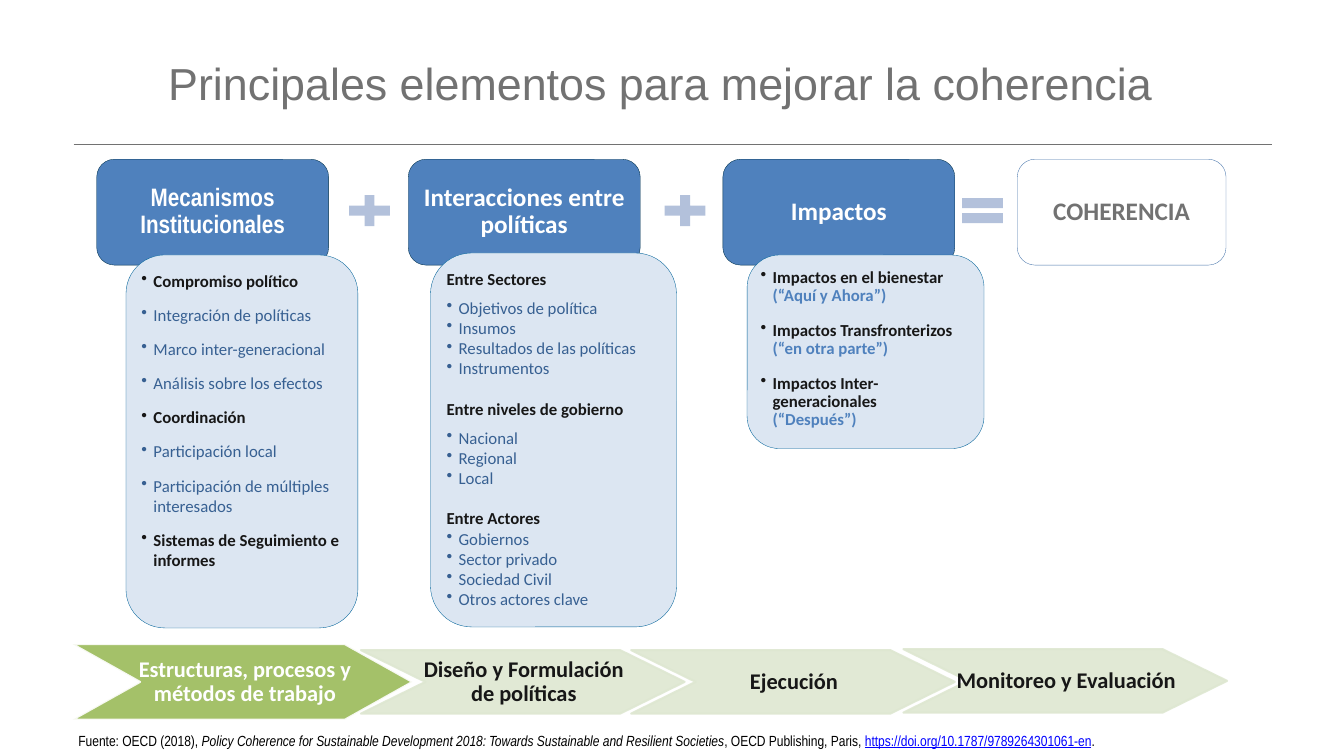
import copy

import pptx
import pptx.dml.color
import pptx.enum.shapes
import pptx.enum.text
import pptx.util
from lxml import etree
from pptx.util import Inches

SHAPES = pptx.enum.shapes.MSO_SHAPE
ALIGN = pptx.enum.text.PP_ALIGN
ANCHOR = pptx.enum.text.MSO_ANCHOR
DRAWING = "{http://schemas.openxmlformats.org/drawingml/2006/main}"
WHITE, GRAY, DARK = "FFFFFF", "727272", "171717"
BLUE, NAVY, PALE_BLUE, OPERATOR = "4F81BD", "376092", "DCE6F2", "B3C1DB"
GREEN, PALE_GREEN = "9BBB59", "DEE7D1"


def color(value):
    return pptx.dml.color.RGBColor.from_string(value)


class CoherenceSlide:
    """Holds the slide and its style, with one method per kind of element."""

    def __init__(self, slide, font="Calibri"):
        self.shapes = slide.shapes
        self.font = font

    def format_run(self, run, size, tint, bold=False, font=None):
        run.font.size = pptx.util.Pt(size)
        run.font.name = font or self.font
        run.font.bold = bold
        run.font.color.rgb = color(tint)

    def paint(self, shape, fill, line=None, width=0.25):
        shape.shadow.inherit = False
        shape.fill.solid()
        shape.fill.fore_color.rgb = color(fill)
        if line:
            shape.line.color.rgb = color(line)
            shape.line.width = pptx.util.Pt(width)
        else:
            shape.line.fill.background()

    def frame(self, shape, anchor, left=0.04, right=0.04, vertical=0.04):
        frame = shape.text_frame
        frame.word_wrap = True
        frame.vertical_anchor = anchor
        frame.margin_left, frame.margin_right = Inches(left), Inches(right)
        frame.margin_top = frame.margin_bottom = Inches(vertical)
        return frame

    def label(self, frame, text, size, tint, font=None):
        frame.text = text
        paragraph = frame.paragraphs[0]
        paragraph.alignment = ALIGN.CENTER
        paragraph.line_spacing = 0.9
        self.format_run(paragraph.runs[0], size, tint, True, font)

    def add_bullet(self, paragraph):
        properties = paragraph._p.get_or_add_pPr()
        properties.set("marL", str(Inches(0.12)))
        properties.set("indent", str(-Inches(0.12)))
        etree.SubElement(properties, DRAWING + "buChar").set("char", "•")

    def rule(self, left, top, width):
        line = self.shapes.add_connector(
            pptx.enum.shapes.MSO_CONNECTOR.STRAIGHT,
            Inches(left), Inches(top), Inches(left + width), Inches(top))
        line.line.color.rgb = color(GRAY)
        line.line.width = pptx.util.Pt(0.5)
        etree.SubElement(line._element.spPr, DRAWING + "effectLst")

    def text(self, left, top, width, height, pieces, size, font, anchor):
        box = self.shapes.add_textbox(Inches(left), Inches(top), Inches(width), Inches(height))
        frame = self.frame(box, anchor, 0.1, 0.1, 0.05)
        for words, tint, italic, underline in pieces:
            run = frame.paragraphs[0].add_run()
            run.text = words
            self.format_run(run, size, tint, font=font)
            run.font.italic = italic
            run.font.underline = underline

    def header(self, left, width, text, fill, line, tint, font=None):
        card = self.shapes.add_shape(
            SHAPES.ROUNDED_RECTANGLE, Inches(left), Inches(1.58), Inches(width), Inches(1.05))
        self.paint(card, fill, line)
        self.label(self.frame(card, ANCHOR.MIDDLE), text, 18, tint, font)

    def operator(self, kind, left):
        sign = self.shapes.add_shape(
            kind, Inches(left), Inches(1.88), Inches(0.55), Inches(0.42))
        self.paint(sign, OPERATOR)

    def panel(self, left, top, width, height, entries):
        card = self.shapes.add_shape(
            SHAPES.ROUNDED_RECTANGLE, Inches(left), Inches(top), Inches(width), Inches(height))
        self.paint(card, PALE_BLUE, "006299")
        frame = self.frame(card, ANCHOR.TOP)
        for index, (text, bold, bullet, before, after, spacing) in enumerate(entries):
            paragraph = frame.add_paragraph() if index else frame.paragraphs[0]
            paragraph.text = text
            if bullet:
                self.add_bullet(paragraph)
            paragraph.alignment = ALIGN.LEFT
            paragraph.line_spacing = spacing
            paragraph.space_before = pptx.util.Pt(before)
            paragraph.space_after = pptx.util.Pt(after)
            tints = (DARK if bold else NAVY, BLUE)
            for run, tint in zip(paragraph.runs, tints):
                self.format_run(run, 12, tint, bold)
            for line_break in paragraph._p.findall(DRAWING + "br"):
                line_break.append(copy.deepcopy(paragraph.runs[0].font._element))

    def chevron(self, left, top, width, height, notch, text, fill, line, tint, margins):
        right, bottom, middle = left + width, top + height, top + height / 2
        outline = [(right - notch, top), (right, middle), (right - notch, bottom),
                   (left, bottom), (left + notch, middle)]
        builder = self.shapes.build_freeform(Inches(left), Inches(top))
        builder.add_line_segments([(Inches(x), Inches(y)) for x, y in outline], close=True)
        step = builder.convert_to_shape()
        self.paint(step, fill, line, 1.5)
        for tone in step._element.spPr.iter(DRAWING + "srgbClr"):
            etree.SubElement(tone, DRAWING + "alpha").set("val", "90000")
        self.label(self.frame(step, ANCHOR.MIDDLE, *margins), text, 16, tint)


def main():
    presentation = pptx.Presentation()
    presentation.slide_width, presentation.slide_height = Inches(13.33), Inches(7.5)
    page = CoherenceSlide(presentation.slides.add_slide(presentation.slide_layouts[6]))

    page.rule(0.73, 1.43, 11.89)
    title = "Principales elementos para mejorar la coherencia"
    page.text(1.57, 0.26, 10.81, 1.12, [(title, GRAY, False, False)], 32, "Arial", ANCHOR.MIDDLE)

    for left, text, font in [(0.96, "Mecanismos Institucionales", "Arial Narrow"),
                             (4.05, "Interacciones entre políticas", None),
                             (7.17, "Impactos", None)]:
        page.header(left, 2.3, text, BLUE, "00314C", WHITE, font)
    page.header(10.09, 2.07, "COHERENCIA", WHITE, "4875AC", GRAY)
    for kind, left in [(SHAPES.MATH_PLUS, 3.39), (SHAPES.MATH_PLUS, 6.52),
                       (SHAPES.MATH_EQUAL, 9.47)]:
        page.operator(kind, left)

    mechanisms = [("Compromiso político", True), ("Integración de políticas", False),
                  ("Marco inter-generacional", False), ("Análisis sobre los efectos", False),
                  ("Coordinación", True), ("Participación local", False),
                  ("Participación de múltiples interesados", False),
                  ("Sistemas de Seguimiento e informes", True)]
    page.panel(1.25, 2.53, 2.3, 3.7,
               [(text, bold, True, 0, 10, 1.0) for text, bold in mechanisms])

    interactions = [
        ("Entre Sectores", 0, 6, ["Objetivos de política", "Insumos",
                                  "Resultados de las políticas", "Instrumentos"]),
        ("Entre niveles de gobierno", 14.6, 6, ["Nacional", "Regional", "Local"]),
        ("Entre Actores", 14.6, 0, ["Gobiernos", "Sector privado", "Sociedad Civil",
                                    "Otros actores clave"])]
    entries = []
    for heading, before, after, items in interactions:
        entries.append((heading, True, False, before, after, 1.0))
        entries += [(item, False, True, 0, 0, 1.0) for item in items]
    page.panel(4.27, 2.51, 2.44, 3.71, entries)

    impacts = ["Impactos en el bienestar\v(“Aquí y Ahora”)",
               "Impactos Transfronterizos\v(“en otra parte”)",
               "Impactos Inter-generacionales\v(“Después”)"]
    page.panel(7.41, 2.53, 2.35, 1.92, [(text, True, True, 0, 12, 0.9) for text in impacts])

    page.chevron(0.72, 6.39, 3.37, 0.75, 0.67, "Estructuras, procesos y métodos de trabajo",
                 GREEN, WHITE, WHITE, (0.62, 0.57, 0.02))
    for left, top, text in [(3.58, 6.45, "Diseño y Formulación de políticas"),
                            (6.26, 6.45, "Ejecución"),
                            (8.96, 6.44, "Monitoreo y Evaluación")]:
        page.chevron(left, top, 3.21, 0.63, 0.64, text,
                     PALE_GREEN, PALE_GREEN, DARK, (0.5, 0.48, 0.01))

    citation = [
        ("Fuente: OECD (2018), ", "000000", False, False),
        ("Policy Coherence for Sustainable Development 2018: "
         "Towards Sustainable and Resilient Societies", "000000", True, False),
        (", OECD Publishing, Paris, ", "000000", False, False),
        ("https://doi.org/10.1787/9789264301061-en", "0000FF", False, True),
        (".", "000000", False, False)]
    page.text(0.68, 7.21, 11.47, 0.28, citation, 10.5, "Arial Narrow", ANCHOR.TOP)

    presentation.save("out.pptx")


if __name__ == "__main__":
    main()
